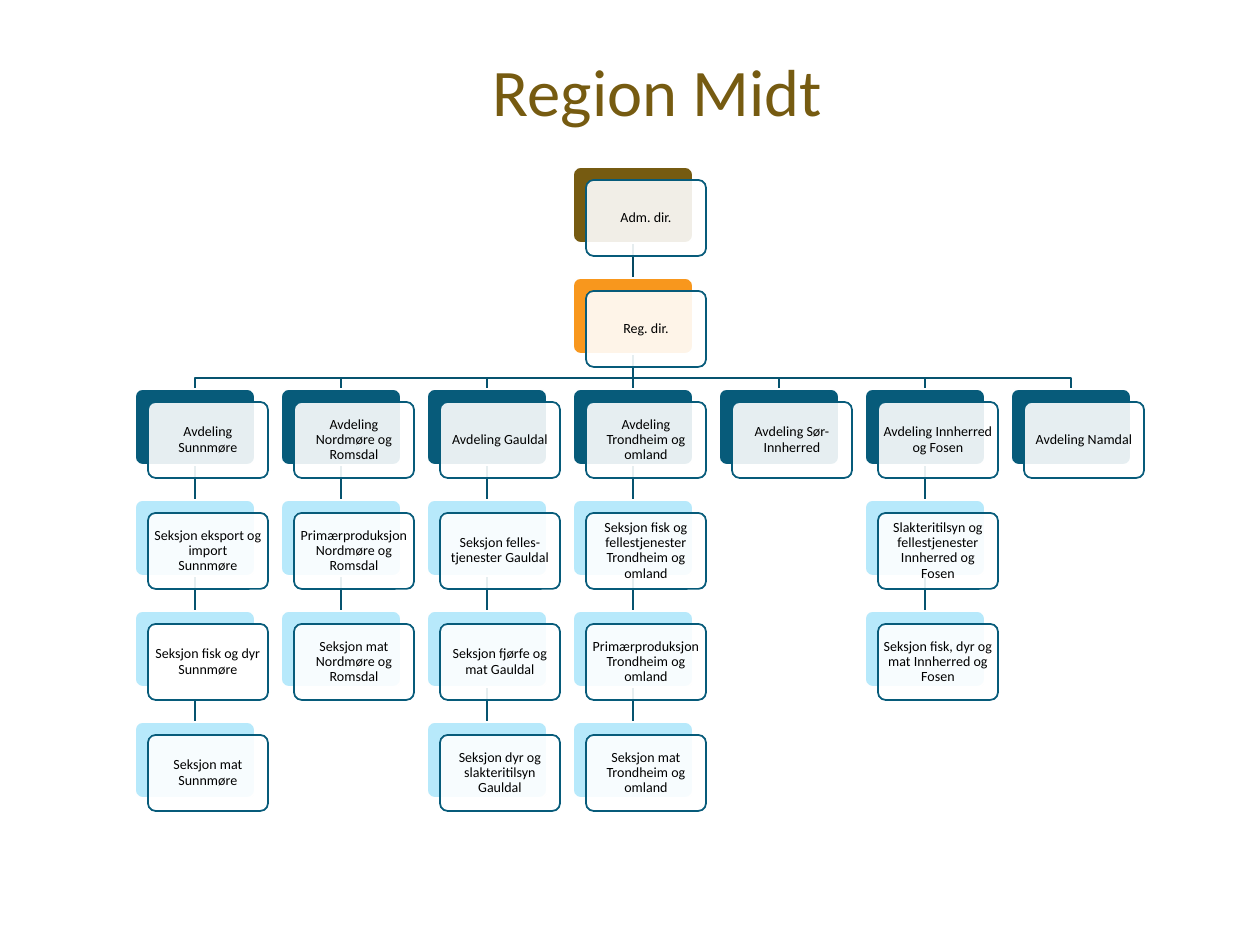
from lxml.etree import SubElement
from pptx import Presentation
from pptx.dml.color import RGBColor
from pptx.enum.shapes import MSO_CONNECTOR, MSO_SHAPE
from pptx.enum.text import MSO_ANCHOR, PP_ALIGN
from pptx.oxml.ns import qn
from pptx.util import Pt

PX = 9144000 / 1260
LEFT, TOP = 135, 167
STEP_X, STEP_Y = 146, 111
WIDE, HIGH, SHIFT = 120, 76, 13
MID = 3
BUS = 378
SOLID = "Seksjon fisk og dyr Sunnmøre"

HEADS = [("Adm. dir.", "765B11"), ("Reg. dir.", "F8971D")]
UNITS = [
    ["Avdeling Sunnmøre", "Seksjon eksport og import\nSunnmøre",
     SOLID, "Seksjon mat Sunnmøre"],
    ["Avdeling Nordmøre og Romsdal", "Primærproduksjon Nordmøre og Romsdal",
     "Seksjon mat Nordmøre og Romsdal"],
    ["Avdeling Gauldal", "Seksjon felles-tjenester Gauldal",
     "Seksjon fjørfe og\nmat Gauldal", "Seksjon dyr og slakteritilsyn Gauldal"],
    ["Avdeling Trondheim og omland",
     "Seksjon fisk og fellestjenester Trondheim og omland",
     "Primærproduksjon Trondheim og omland", "Seksjon mat Trondheim og omland"],
    ["Avdeling Sør-Innherred"],
    ["Avdeling Innherred og Fosen",
     "Slakteritilsyn og fellestjenester Innherred og Fosen",
     "Seksjon fisk, dyr og mat Innherred og Fosen"],
    ["Avdeling Namdal"],
]


def px(num):
    return round(num * PX)


def tint(color, code):
    color.rgb = RGBColor.from_string(code)


prs = Presentation()
prs.slide_width, prs.slide_height = px(1260), px(945)
slide = prs.slides.add_slide(prs.slide_layouts[6])
shapes = slide.shapes

# Title
title = shapes.add_textbox(px(161), px(24), px(993), px(107))
frame = title.text_frame
frame.word_wrap = True
frame.vertical_anchor = MSO_ANCHOR.BOTTOM
frame.margin_left = frame.margin_right = 0
frame.margin_top = frame.margin_bottom = 0
para = frame.paragraphs[0]
para.alignment = PP_ALIGN.CENTER
para.line_spacing = 0.9
run = para.add_run()
run.text = "Region Midt"
run.font.size = Pt(38)
run.font.name = "Calibri"
tint(run.font.color, "765B11")

# Cards: (column, row, label, colour)
cards = [(MID, row, text, code) for row, (text, code) in enumerate(HEADS)]
for col, unit in enumerate(UNITS):
    for row, text in enumerate(unit, len(HEADS)):
        code = "075B7A" if row == len(HEADS) else "B7E9FB"
        cards.append((col, row, text, code))

backs = {}
for col, row, text, code in cards:
    x, y = LEFT + col * STEP_X, TOP + row * STEP_Y
    pair = []
    for gap, fill, edge in ((0, code, "FFFFFF"), (SHIFT, "FFFFFF", "075B7A")):
        card = shapes.add_shape(MSO_SHAPE.ROUNDED_RECTANGLE, px(x + gap),
                                px(y + gap), px(WIDE), px(HIGH))
        card.adjustments[0] = 0.1
        card.shadow.inherit = False
        card.fill.solid()
        tint(card.fill.fore_color, fill)
        tint(card.line.color, edge)
        card.line.width = Pt(1)
        pair.append(card)
    back, front = pair
    backs[col, row] = back
    if text != SOLID:
        paint = front.fill._xPr.find(qn("a:solidFill"))[0]
        SubElement(paint, qn("a:alpha"), val="90000")

    frame = front.text_frame
    frame.word_wrap = True
    frame.vertical_anchor = MSO_ANCHOR.MIDDLE
    frame.margin_left = frame.margin_right = px(3)
    frame.margin_top = frame.margin_bottom = px(3)
    para = frame.paragraphs[0]
    para.alignment = PP_ALIGN.CENTER
    para.line_spacing = 0.9
    for num, part in enumerate(text.split("\n")):
        if num:
            para.add_line_break()
        run = para.add_run()
        run.text = part
        run.font.size = Pt(8)
        run.font.name = "Calibri"
        tint(run.font.color, "000000")

# Links, placed behind the cards
links = []
for (col, row), back in backs.items():
    above = backs.get((col, row - 1))
    if above is not None:
        link = shapes.add_connector(MSO_CONNECTOR.STRAIGHT, 0, 0, 0, 0)
        link.begin_connect(above, 2)
        link.end_connect(back, 0)
        SubElement(link._element.spPr, qn("a:effectLst"))
    elif row == len(HEADS):
        hub = LEFT + MID * STEP_X + WIDE // 2
        end = LEFT + col * STEP_X + WIDE // 2
        path = shapes.build_freeform(hub, TOP + STEP_Y + HIGH, scale=PX)
        path.add_line_segments(
            [(hub, BUS), (end, BUS), (end, TOP + row * STEP_Y)], close=False)
        link = path.convert_to_shape()
        link.fill.background()
        link.shadow.inherit = False
    else:
        continue
    tint(link.line.color, "064962" if row == 1 else "06536F")
    link.line.width = Pt(1)
    links.append(link)

for link in links:
    shapes._spTree.insert(2, link._element)

prs.save("out.pptx")
